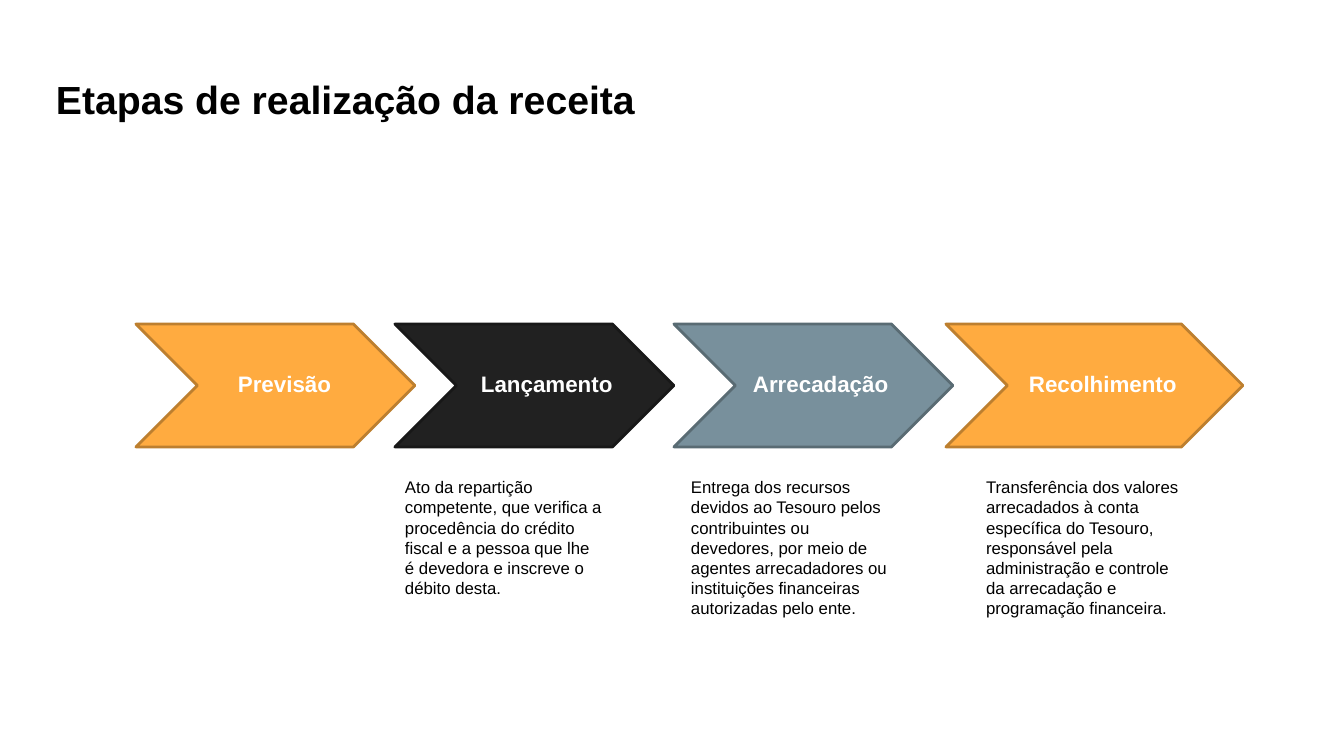
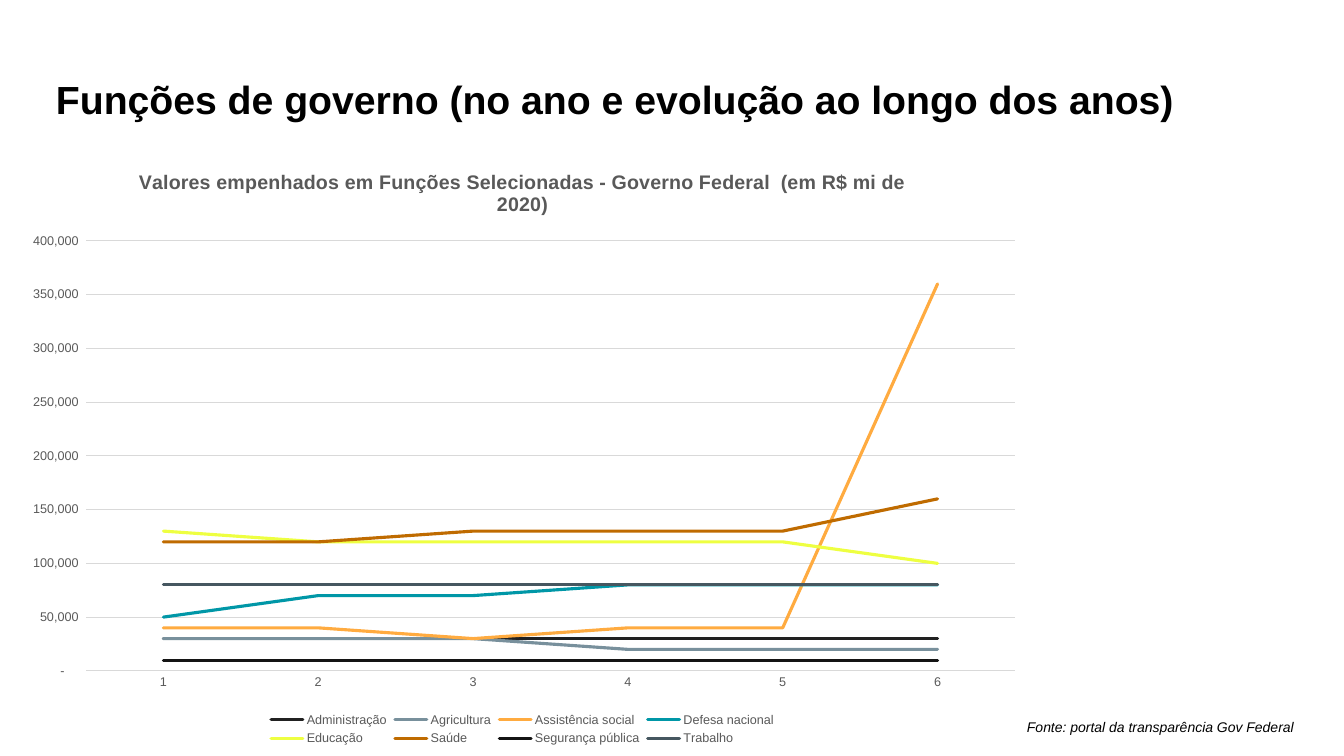
from dataclasses import dataclass

from lxml import etree
from pptx import Presentation
from pptx import util as u
from pptx.chart.data import CategoryChartData
from pptx.dml.color import RGBColor
from pptx.enum import chart as charts, shapes, text
from pptx.oxml import parse_xml
from pptx.oxml.ns import nsdecls, qn


@dataclass(frozen=True)
class Theme:
    font: str = "Arial"
    ink: str = "000000"
    paper: str = "FFFFFF"
    muted: str = "595959"
    grid: str = "D9D9D9"
    orange: str = "FFAB40"
    orange_edge: str = "BD7F2F"
    black: str = "212121"
    black_edge: str = "181818"
    slate: str = "78909C"
    slate_edge: str = "596B73"
    teal: str = "0097A7"
    yellow: str = "EEFF41"
    brown: str = "BF6B00"
    coal: str = "141414"
    steel: str = "465760"
    title: int = 28
    step: int = 16
    chart_title: int = 14
    body: int = 12
    source: int = 10
    axis: int = 9


theme = Theme()
PX = 914400 / 100.8
WIDTH, HEIGHT = 1344, 756


def style(font, size, color, bold=False, italic=False):
    font.name = theme.font
    font.size = u.Pt(size)
    font.bold = bold
    font.italic = italic
    font.color.rgb = RGBColor.from_string(color)


def add_text(slide, box, words, size, color, inset_y=5, wrap=True, **look):
    frame = slide.shapes.add_textbox(*[round(n * PX) for n in box]).text_frame
    frame.word_wrap = wrap
    frame.vertical_anchor = text.MSO_ANCHOR.TOP
    frame.margin_left = frame.margin_right = round(10 * PX)
    frame.margin_top = frame.margin_bottom = round(inset_y * PX)
    run = frame.paragraphs[0].add_run()
    run.text = words
    style(run.font, size, color, **look)


deck = Presentation()
deck.slide_width = round(WIDTH * PX)
deck.slide_height = round(HEIGHT * PX)
blank = deck.slide_layouts[6]

headings = [
    "Etapas de realização da receita",
    "Funções de governo (no ano e evolução ao longo dos anos)",
]
slides = []
for heading in headings:
    slide = deck.slides.add_slide(blank)
    add_text(slide, (46, 65, 1252, 85), heading, theme.title, theme.ink,
             inset_y=10, bold=True)
    slides.append(slide)
stages_slide, functions_slide = slides

stages = [
    ("Previsão", 136, 279, 228, theme.orange, theme.orange_edge, None, ""),
    ("Lançamento", 395, 279, 471, theme.black, theme.black_edge, 395,
     "Ato da repartição competente, que verifica a procedência do crédito "
     "fiscal e a pessoa que lhe é devedora e inscreve o débito desta."),
    ("Arrecadação", 674, 279, 743, theme.slate, theme.slate_edge, 681,
     "Entrega dos recursos devidos ao Tesouro pelos contribuintes ou "
     "devedores, por meio de agentes arrecadadores ou instituições "
     "financeiras autorizadas pelo ente."),
    ("Recolhimento", 946, 297, 1019, theme.orange, theme.orange_edge, 976,
     "Transferência dos valores arrecadados à conta específica do Tesouro, "
     "responsável pela administração e controle da arrecadação e "
     "programação financeira."),
]
for stage, left, width, label_left, fill, edge, detail_left, detail in stages:
    chevron = stages_slide.shapes.add_shape(
        shapes.MSO_SHAPE.CHEVRON,
        *[round(n * PX) for n in (left, 324, width, 123)])
    chevron.shadow.inherit = False
    chevron.fill.solid()
    chevron.fill.fore_color.rgb = RGBColor.from_string(fill)
    chevron.line.color.rgb = RGBColor.from_string(edge)
    chevron.line.width = u.Pt(2)
    add_text(stages_slide, (label_left, 365, 172, 37), stage, theme.step,
             theme.paper, bold=True)
    if detail:
        add_text(stages_slide, (detail_left, 472, 218, 152), detail,
                 theme.body, theme.ink)

spending = [
    ("Administração", theme.black, (30000, 30000, 30000, 30000, 30000, 30000)),
    ("Agricultura", theme.slate, (30000, 30000, 30000, 20000, 20000, 20000)),
    ("Assistência social", theme.orange,
     (40000, 40000, 30000, 40000, 40000, 360000)),
    ("Defesa nacional", theme.teal,
     (50000, 70000, 70000, 80000, 80000, 80000)),
    ("Educação", theme.yellow,
     (130000, 120000, 120000, 120000, 120000, 100000)),
    ("Saúde", theme.brown, (120000, 120000, 130000, 130000, 130000, 160000)),
    ("Segurança pública", theme.coal,
     (10000, 10000, 10000, 10000, 10000, 10000)),
    ("Trabalho", theme.steel, (80000, 80000, 80000, 80000, 80000, 80000)),
]
spending_data = CategoryChartData()
spending_data.categories = [str(year) for year in range(1, 7)]
for function, color, amounts in spending:
    spending_data.add_series(function, amounts)

chart_box = (9, 148, 1027, 602)
evolution = functions_slide.shapes.add_chart(
    charts.XL_CHART_TYPE.LINE, *[round(n * PX) for n in chart_box],
    spending_data).chart
style(evolution.font, theme.source, theme.ink)

evolution.has_title = True
caption = evolution.chart_title.text_frame.paragraphs[0].add_run()
caption.text = ("Valores empenhados em Funções Selecionadas - "
                "Governo Federal  (em R$ mi de 2020)")
style(caption.font, theme.chart_title, theme.muted, bold=True)
evolution.chart_title.include_in_layout = False

evolution.has_legend = True
evolution.legend.position = charts.XL_LEGEND_POSITION.BOTTOM
evolution.legend.include_in_layout = False
style(evolution.legend.font, theme.axis, theme.muted)

years, values = evolution.category_axis, evolution.value_axis
for axis in (years, values):
    axis.major_tick_mark = axis.minor_tick_mark = charts.XL_TICK_MARK.NONE
    style(axis.tick_labels.font, theme.axis, theme.muted)
values.has_major_gridlines = True
for rule in (years.format.line, values.major_gridlines.format.line):
    rule.color.rgb = RGBColor.from_string(theme.grid)
    rule.width = u.Pt(0.75)
values.format.line.fill.background()
values.minimum_scale, values.maximum_scale = 0, 400000
values.major_unit = 50000
values.tick_labels.number_format = (
    '_-* #,##0_-;\\-* #,##0_-;_-* "-"??_-;_-@_-')
values.tick_labels.number_format_is_linked = False

plot = evolution.plots[0]
plot.vary_by_categories = False
for series, (function, color, amounts) in zip(plot.series, spending):
    series.smooth = False
    series.marker.style = charts.XL_MARKER_STYLE.NONE
    series.format.line.color.rgb = RGBColor.from_string(color)
    series.format.line.width = u.Pt(2.25)
    series._element.find(qn("c:spPr")).find(qn("a:ln")).set("cap", "rnd")

plot_box = (86, 241, 929, 430)
left, top, width, height = chart_box
fractions = {
    "x": (plot_box[0] - left) / width,
    "y": (plot_box[1] - top) / height,
    "w": plot_box[2] / width,
    "h": plot_box[3] / height,
}
layout = parse_xml(
    f'<c:layout {nsdecls("c")}><c:manualLayout>'
    '<c:layoutTarget val="inner"/><c:xMode val="edge"/><c:yMode val="edge"/>'
    + "".join(f'<c:{side} val="{part:.4f}"/>'
              for side, part in fractions.items())
    + '</c:manualLayout></c:layout>')
plot_area = values._element.getparent()
for child in list(plot_area):
    if etree.QName(child).localname == "layout":
        plot_area.remove(child)
plot_area.insert(0, layout)

add_text(functions_slide, (1017, 714, 300, 27),
         "Fonte: portal da transparência Gov Federal", theme.source,
         theme.ink, wrap=False, italic=True)

deck.save("out.pptx")
